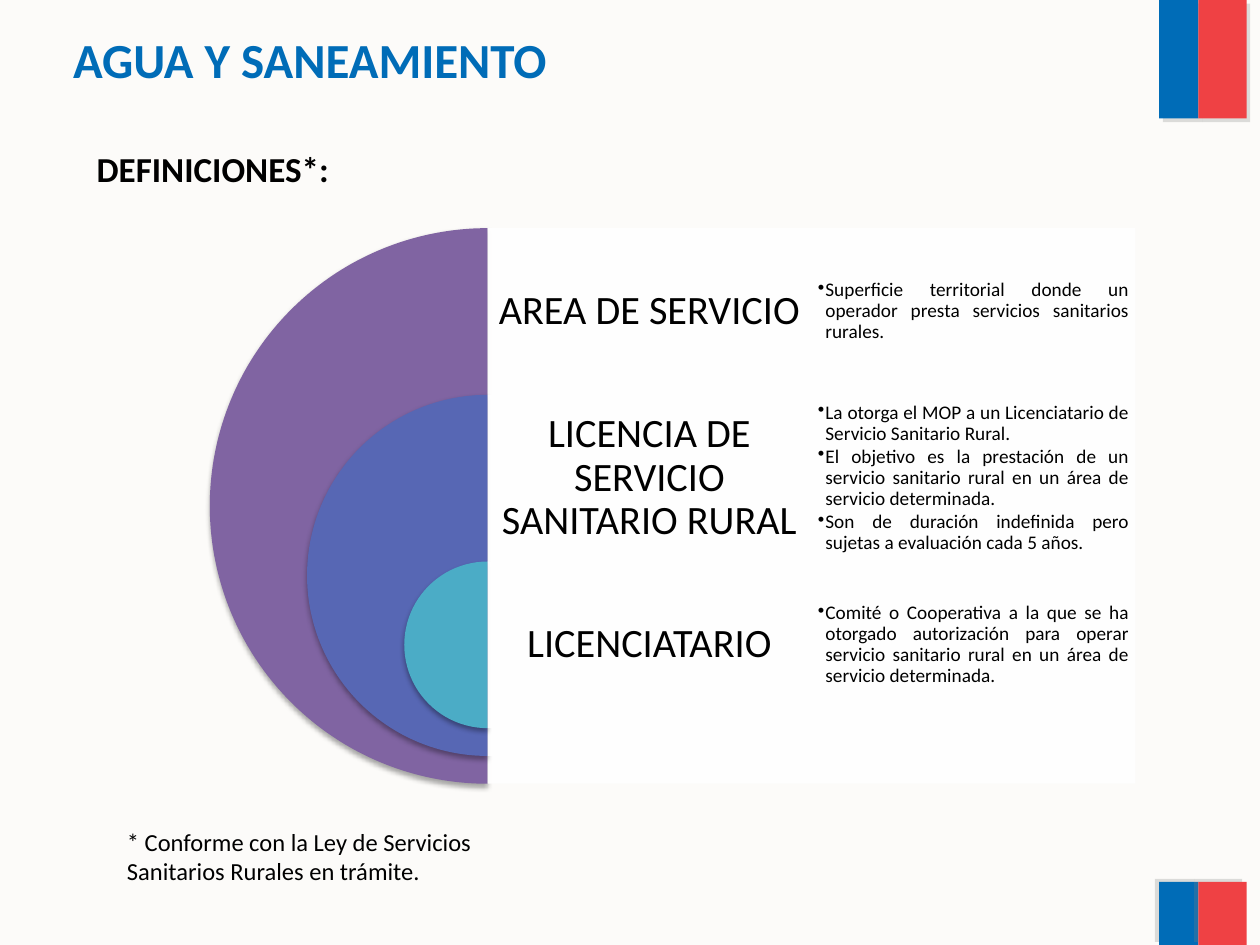
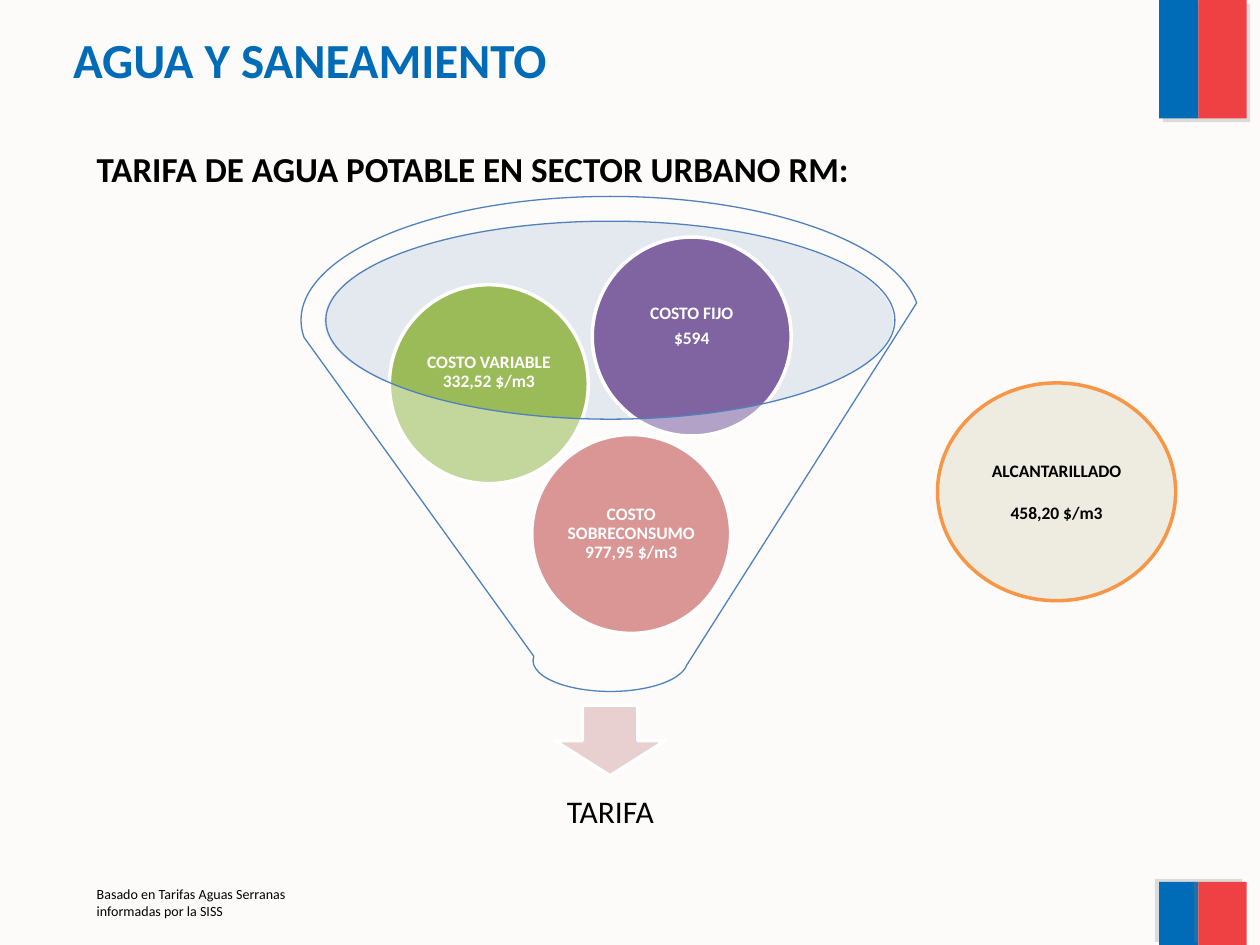
from lxml import etree
from pptx import Presentation
from pptx.dml.color import RGBColor
from pptx.enum import shapes, text
from pptx.oxml import ns
from pptx.util import Cm, Pt

FONT = "Calibri"
BLUE, RED, BLACK, WHITE, PAPER = "006CB7", "EF4144", "000000", "FFFFFF", "FCFBF9"
TITLE = "AGUA Y SANEAMIENTO"
TITLE_BOX = (1.22, 0.46, 22.07, 1.45)
BAND_COLUMNS = [(23.37, 0.79, BLUE), (24.16, 0.97, RED)]
BAND_ROWS = [(0, 2.39, 45), (17.78, 1.27, 215)]

DEFINITIONS = [
    ("AREA DE SERVICIO", "8064A2", [
        "Superficie territorial donde un operador presta servicios sanitarios rurales.",
    ]),
    ("LICENCIA DE SERVICIO SANITARIO RURAL", "5767B4", [
        "La otorga el MOP a un Licenciatario de Servicio Sanitario Rural.",
        "El objetivo es la prestación de un servicio sanitario rural en un área de servicio determinada.",
        "Son de duración indefinida pero sujetas a evaluación cada 5 años.",
    ]),
    ("LICENCIATARIO", "4BACC6", [
        "Comité o Cooperativa a la que se ha otorgado autorización para operar "
        "servicio sanitario rural en un área de servicio determinada.",
    ]),
]
DEFINITIONS_NOTE = "* Conforme con la Ley de Servicios Sanitarios Rurales en trámite."
ARC_TOP, ARC_AXIS, ARC_SIZE, COLUMN_WIDTH = 4.6, 9.83, 11.2, 6.53

COSTS = [
    (["COSTO SOBRECONSUMO 977,95 $/m3"], "C0504D", 10.72, 8.76, 0.03),
    (["COSTO VARIABLE 332,52 $/m3"], "9BBB59", 7.85, 5.74, 0.5),
    (["COSTO FIJO", "$594"], "8064A2", 11.94, 4.78, 0.45),
]
COST_SIZE = 4.01
SEWERAGE = ["ALCANTARILLADO", "458,20 $/m3"]
TARIFF_NOTE = "Basado en Tarifas Aguas Serranas informadas por la SISS"


def color(value):
    return RGBColor.from_string(value)


def add_xml(parent, tag, **attributes):
    return etree.SubElement(parent, ns.qn(tag), attributes)


def add_shape(slide, kind, box, fill, opacity=None, line=None, line_width=2):
    shape = slide.shapes.add_shape(kind, *map(Cm, box))
    shape.shadow.inherit = False
    shape.fill.solid()
    shape.fill.fore_color.rgb = color(fill)
    if opacity is not None:
        value = next(shape.element.spPr.iter(ns.qn("a:srgbClr")))
        add_xml(value, "a:alpha", val=str(opacity * 1000))
    if line:
        shape.line.color.rgb = color(line)
        shape.line.width = Pt(line_width)
    else:
        shape.line.fill.background()
    return shape


def add_shadow(shape, shade, opacity, blur, distance, angle):
    effects = shape.element.spPr.find(ns.qn("a:effectLst"))
    shadow = add_xml(effects, "a:outerShdw", blurRad=str(Pt(blur)), dist=str(Pt(distance)),
                     dir=str(angle * 60000), algn="ctr", rotWithShape="0")
    value = add_xml(shadow, "a:srgbClr", val=shade)
    add_xml(value, "a:alpha", val=str(opacity * 1000))


def write(shape, lines, size, ink=BLACK, bold=False, align="LEFT", anchor="MIDDLE",
          spacing=None, after=0, inset=None, bottom=None, bullets=False):
    frame = shape.text_frame
    frame.word_wrap = True
    frame.vertical_anchor = getattr(text.MSO_ANCHOR, anchor)
    if inset is not None:
        frame.margin_left = frame.margin_right = frame.margin_top = frame.margin_bottom = Cm(inset)
    if bottom is not None:
        frame.margin_bottom = Cm(bottom)
    for index, line in enumerate(lines):
        paragraph = frame.add_paragraph() if index else frame.paragraphs[0]
        paragraph.alignment = getattr(text.PP_ALIGN, align)
        if spacing:
            paragraph.line_spacing = spacing
        if index < len(lines) - 1:
            paragraph.space_after = Pt(after)
        if bullets:
            properties = paragraph._p.get_or_add_pPr()
            properties.set("marL", str(Cm(0.15)))
            properties.set("indent", str(-Cm(0.15)))
            add_xml(properties, "a:buChar", char="•")
        run = paragraph.add_run()
        run.text = line
        run.font.name = FONT
        run.font.size = Pt(size)
        run.font.bold = bold
        run.font.color.rgb = color(ink)


def add_label(slide, box, lines, size, **style):
    write(slide.shapes.add_textbox(*map(Cm, box)), lines, size, **style)


def add_slide(presentation, heading, heading_width):
    slide = presentation.slides.add_slide(presentation.slide_layouts[5])
    write(slide.shapes.title, [TITLE], 28, ink=BLUE, bold=True)
    add_label(slide, (1.7, 2.84, heading_width, 1.12), [heading], 20, bold=True, anchor="TOP")
    return slide


def prepare_layout(layout, slide):
    title = layout.placeholders[0]
    title.left, title.top, title.width, title.height = map(Cm, TITLE_BOX)
    bands = [(column, row) for row in BAND_ROWS for column in BAND_COLUMNS]
    for number, ((left, width, fill), (top, height, angle)) in enumerate(bands, 20):
        band = add_shape(slide, shapes.MSO_SHAPE.RECTANGLE, (left, top, width, height), fill)
        add_shadow(band, "808080", 25, 0, 3, angle)
        band.element.nvSpPr.cNvPr.set("id", str(number))
        layout.shapes.element.append(band.element)


def draw_definitions(slide):
    row_height = 0.3 * ARC_SIZE
    for index, (term, fill, meanings) in enumerate(DEFINITIONS):
        top = ARC_TOP + index * row_height
        size = ARC_SIZE * (1 - 0.35 * index)
        arc = add_shape(slide, shapes.MSO_SHAPE.PIE, (ARC_AXIS - size / 2, top, size, size), fill)
        arc.adjustments[0], arc.adjustments[1] = 54, 162
        add_shadow(arc, BLACK, 35, 3.1, 1.8, 90)
        add_shape(slide, shapes.MSO_SHAPE.RECTANGLE,
                  (ARC_AXIS, top, 2 * COLUMN_WIDTH, size), WHITE, opacity=90)
        add_label(slide, (ARC_AXIS, top, COLUMN_WIDTH, row_height), [term], 23,
                  align="CENTER", spacing=0.9, inset=0.22)
        add_label(slide, (ARC_AXIS + COLUMN_WIDTH, top, COLUMN_WIDTH, row_height), meanings, 11,
                  align="JUSTIFY", spacing=0.9, after=1.65, inset=0.13, bullets=True)
    add_label(slide, (2.31, 16.54, 8.99, 1.45), [DEFINITIONS_NOTE], 14, anchor="TOP")


def draw_tariff(slide):
    kinds = shapes.MSO_SHAPE
    add_shape(slide, kinds.OVAL, (6.53, 4.47, 11.48, 3.99), "C2CDE1", opacity=40)
    add_shape(slide, kinds.DOWN_ARROW, (11.18, 14.22, 2.24, 1.42), "E8D0D0", line=WHITE)
    add_label(slide, (6.96, 15.4, 10.69, 2), ["TARIFA"], 18, align="CENTER", spacing=0.9)
    for lines, fill, left, top, bottom in COSTS:
        cost = add_shape(slide, kinds.OVAL, (left, top, COST_SIZE, COST_SIZE), fill, line=WHITE)
        write(cost, lines, 10, ink=WHITE, bold=True, align="CENTER", spacing=0.9,
              after=3.5, inset=0.03, bottom=bottom)
    add_shape(slide, kinds.FUNNEL, (6.07, 3.96, 12.47, 9.98), WHITE, opacity=40,
              line="4F81BD", line_width=0.75)
    add_label(slide, (1.7, 17.73, 5.59, 0.94), [TARIFF_NOTE], 8, anchor="TOP")
    sewerage = add_shape(slide, kinds.OVAL, (18.9, 7.72, 4.8, 4.39), "EEECE1", line="F79646")
    write(sewerage, SEWERAGE, 10, bold=True, align="CENTER", after=12)


def main():
    presentation = Presentation()
    presentation.slide_width, presentation.slide_height = Cm(25.4), Cm(19.05)
    background = presentation.slide_master.background.fill
    background.solid()
    background.fore_color.rgb = color(PAPER)
    definitions = add_slide(presentation, "DEFINICIONES*:", 8)
    prepare_layout(presentation.slide_layouts[5], definitions)
    draw_definitions(definitions)
    draw_tariff(add_slide(presentation, "TARIFA DE AGUA POTABLE EN SECTOR URBANO RM:", 20.8))
    presentation.save("out.pptx")


if __name__ == "__main__":
    main()
